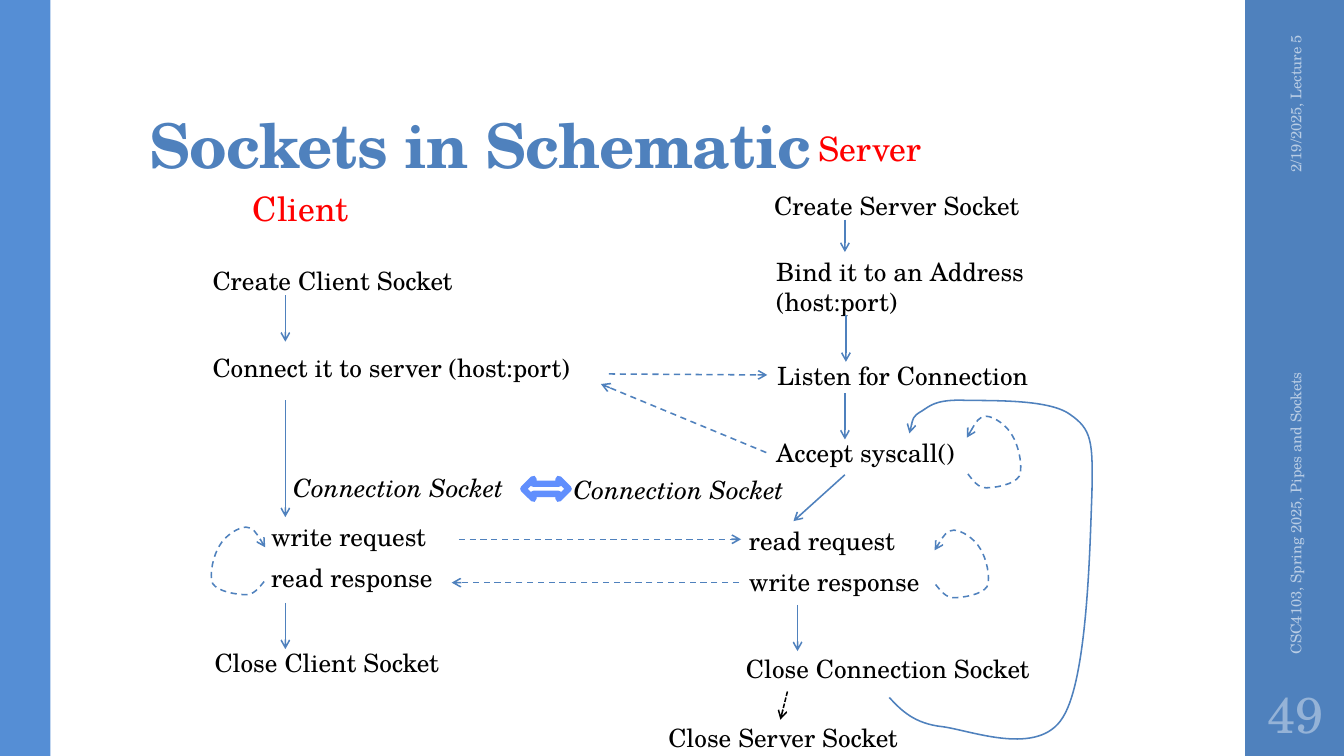
from lxml.etree import SubElement
from pptx import Presentation
from pptx.dml.color import RGBColor
from pptx.enum.dml import MSO_LINE
from pptx.enum.shapes import MSO_CONNECTOR, MSO_SHAPE
from pptx.enum.text import MSO_ANCHOR, PP_ALIGN
from pptx.oxml.ns import qn
from pptx.util import Inches, Pt

WIDTH, HEIGHT = 13.33, 7.5
FONT = "TeX Gyre Schola"
COLORS = {
    "blue": "4F81BD", "left band": "558ED5", "red": "FF0000", "black": "000000",
    "white": "FFFFFF", "footer": "B9CDE5", "number": "95B3D7", "socket arrow": "618FFD",
}
BANDS = [(WIDTH - 0.98, 1, "blue"), (0, 0.5, "left band")]  # left, width, colour

# Text styles: font values, then text frame and paragraph values
STYLES = {
    "title": {"font": {"size": Pt(44), "bold": True}, "color": "blue",
              "frame": {"vertical_anchor": MSO_ANCHOR.BOTTOM, "word_wrap": True,
                        "margin_top": Inches(0.03)},
              "para": {"line_spacing": 0.9}},
    "date": {"font": {"size": Pt(10.5)}, "color": "footer", "turn": 270,
             "frame": {"vertical_anchor": MSO_ANCHOR.MIDDLE, "word_wrap": True},
             "para": {"alignment": PP_ALIGN.RIGHT}},
    "course": {"font": {"size": Pt(10.5)}, "color": "footer", "turn": 270,
               "frame": {"vertical_anchor": MSO_ANCHOR.MIDDLE, "word_wrap": True}},
    "number": {"font": {"size": Pt(36)}, "color": "number",
               "frame": {"vertical_anchor": MSO_ANCHOR.MIDDLE, "word_wrap": True,
                         "margin_left": Inches(0.05), "margin_right": Inches(0.05)},
               "para": {"alignment": PP_ALIGN.CENTER}},
    "role": {"font": {"size": Pt(24)}, "color": "red", "frame": {"word_wrap": False}},
    "step": {"font": {"size": Pt(18)}, "color": "black", "frame": {"word_wrap": False}},
    "socket": {"font": {"size": Pt(18), "italic": True}, "color": "black",
               "frame": {"word_wrap": False}},
}

# Style, text, left, top, width, height
FRAME_TEXTS = [
    ("title", "Sockets in Schematic", 1.38, 0.32, 10.6, 1.53),
    ("date", "2/19/2025, Lecture 5", 11.81, 1.09, 2.08, 0.4),
    ("course", "CSC4103, Spring 2025, Pipes and Sockets", 10.89, 4.43, 3.92, 0.4),
    ("number", "49", 12.35, 6.75, 1, 0.65),
    ("role", "Client", 2.41, 1.82, 1.16, 0.5),
    ("role", "Server", 8.02, 1.22, 1.23, 0.5),
    ("step", "Bind it to an Address\n(host:port)", 7.6, 2.49, 2.74, 0.7),
]
# Style, text, left, top, width; all one line high
STEP_HEIGHT = 0.4
STEPS = [
    ("step", "Create Client Socket", 2.01, 2.58, 2.62),
    ("step", "Connect it to server (host:port)", 2.01, 3.45, 3.78),
    ("socket", "Connection Socket", 2.81, 4.64, 2.36),
    ("step", "write request", 2.59, 5.12, 1.76),
    ("step", "read response", 2.59, 5.53, 1.82),
    ("step", "Close Client Socket", 2.03, 6.37, 2.46),
    ("step", "Create Server Socket", 7.58, 1.84, 2.67),
    ("step", "Listen for Connection", 7.61, 3.53, 2.72),
    ("step", "Accept syscall()", 7.6, 4.29, 2),
    ("socket", "Connection Socket", 5.59, 4.66, 2.36),
    ("step", "read request", 7.33, 5.16, 1.67),
    ("step", "write response", 7.33, 5.57, 1.91),
    ("step", "Close Connection Socket", 7.3, 6.43, 3.06),
    ("step", "Close Server Socket", 6.53, 7.12, 2.52),
]

CLIENT_X, SERVER_X, CLOSE_X = 2.83, 8.38, 7.91
DOWN_ARROWS = [  # column, top, length
    (CLIENT_X, 2.93, 0.46), (CLIENT_X, 3.97, 1.16), (CLIENT_X, 5.98, 0.46),
    (SERVER_X, 2.18, 0.32), (8.39, 3.13, 0.46), (SERVER_X, 3.9, 0.46),
    (CLOSE_X, 6, 0.46),
]
SLANTED_ARROWS = [  # start, end, colour, dash
    ((SERVER_X, 4.71), (7.87, 5.17), "blue", None),
    ((7.81, 6.86), (7.74, 7.14), "black", MSO_LINE.SQUARE_DOT),
    ((6.04, 3.71), (7.61, 3.72), "blue", MSO_LINE.DASH),
    ((7.6, 4.49), (5.96, 3.81), "blue", MSO_LINE.DASH),
    ((4.55, 5.35), (7.35, 5.35), "blue", MSO_LINE.DASH),
    ((7.33, 5.78), (4.48, 5.78), "blue", MSO_LINE.DASH),
]

# Bezier points: a start, then two controls and an end for each stretch
LOOP_WIDTH, LOOP_HEIGHT = 0.54, 0.67
REPEAT_LOOP = [
    (0.01, 0.54), (0.06, 0.6), (0.11, 0.67), (0.19, 0.67),
    (0.28, 0.67), (0.47, 0.64), (0.52, 0.56), (0.56, 0.47), (0.51, 0.27), (0.45, 0.18),
    (0.4, 0.09), (0.27, 0), (0.19, 0), (0.12, 0), (0.06, 0.1), (0, 0.2),
]
LOOP_PLACES = [  # x of the arrow tip, top, direction, vertical stretch
    (9.27, 5.26, 1, 1), (2.63, 5.23, -1, 1), (9.59, 4.13, 1, 1.06),
]
NEXT_CLIENT_PLACE = (8.82, 3.97, 2.01, 3.36)
NEXT_CLIENT = [
    (8.82, 6.92), (8.94, 7.05), (9.07, 7.18), (9.35, 7.21),
    (9.64, 7.25), (10.3, 7.51), (10.54, 7.12), (10.79, 6.73), (10.81, 5.39), (10.83, 4.89),
    (10.84, 4.38), (10.83, 4.26), (10.61, 4.11), (10.39, 3.95), (9.77, 3.98), (9.52, 3.97),
    (9.27, 3.97), (9.22, 4.03), (9.14, 4.08), (9.05, 4.13), (9.04, 4.21), (9.02, 4.3),
]


def rgb(name):
    return RGBColor.from_string(COLORS[name])


def assign(target, values):
    for name, value in values.items():
        setattr(target, name, value)


def add_text(page, style_name, text, *place):
    style = STYLES[style_name]
    box = page.shapes.add_textbox(*map(Inches, place))
    box.rotation = style.get("turn", 0)
    assign(box.text_frame, style["frame"])
    box.text_frame.text = text
    for para in box.text_frame.paragraphs:
        assign(para, style.get("para", {}))
        for span in para.runs:
            assign(span.font, {"name": FONT, **style["font"]})
            span.font.color.rgb = rgb(style["color"])
            if style_name == "title":
                span._r.get_or_add_rPr().set("spc", "-50")


def add_block(page, kind, place, fill, outline=None):
    block = page.shapes.add_shape(kind, *map(Inches, place))
    block.shadow.inherit = False
    block.fill.solid()
    block.fill.fore_color.rgb = rgb(fill)
    if outline:
        block.line.color.rgb = rgb(outline)
        block.line.width = Pt(4.5)
    else:
        block.line.fill.background()


def style_arrow(line, color, dash):
    line.color.rgb = rgb(color)
    line.width = Pt(1.1)
    if dash:
        line.dash_style = dash
    SubElement(line._get_or_add_ln(), qn("a:tailEnd"), type="arrow")


def add_arrow(page, start, end, color="blue", dash=None):
    arrow = page.shapes.add_connector(MSO_CONNECTOR.STRAIGHT, *map(Inches, start + end))
    style_arrow(arrow.line, color, dash)
    SubElement(arrow._element.spPr, qn("a:effectLst"))


def add_curve(page, place, points, dash=None):
    """Span the place with a freeform, then give it cubic stretches as its outline."""
    left, top, width, height = map(Inches, place)
    builder = page.shapes.build_freeform(left, top)
    builder.add_line_segments([(left + width, top + height)], close=False)
    curve = builder.convert_to_shape()
    outline = curve._element.find(".//" + qn("a:path"))
    for segment in list(outline):
        outline.remove(segment)
    for index, (x, y) in enumerate(points):
        if index == 0:
            segment = SubElement(outline, qn("a:moveTo"))
        elif index % 3 == 1:
            segment = SubElement(outline, qn("a:cubicBezTo"))
        SubElement(segment, qn("a:pt"), x=str(Inches(x) - left), y=str(Inches(y) - top))
    curve.shadow.inherit = False
    curve.fill.background()
    style_arrow(curve.line, "blue", dash)


def main():
    deck = Presentation()
    deck.slide_width, deck.slide_height = Inches(WIDTH), Inches(HEIGHT)
    page = deck.slides.add_slide(deck.slide_layouts[6])
    for left, width, color in BANDS:
        add_block(page, MSO_SHAPE.RECTANGLE, (left, 0, width, HEIGHT), color)
    for entry in FRAME_TEXTS:
        add_text(page, *entry)
    for entry in STEPS:
        add_text(page, *entry, STEP_HEIGHT)
    for x, top, length in DOWN_ARROWS:
        add_arrow(page, (x, top), (x, top + length))
    for entry in SLANTED_ARROWS:
        add_arrow(page, *entry)
    for tip, top, direction, stretch in LOOP_PLACES:
        loop = [(tip + direction * x, top + stretch * y) for x, y in REPEAT_LOOP]
        left = min(tip, tip + direction * LOOP_WIDTH)
        add_curve(page, (left, top, LOOP_WIDTH, LOOP_HEIGHT * stretch), loop, MSO_LINE.DASH)
    add_curve(page, NEXT_CLIENT_PLACE, NEXT_CLIENT)
    add_block(page, MSO_SHAPE.LEFT_RIGHT_ARROW, (5.19, 4.75, 0.45, 0.2),
              "white", "socket arrow")
    deck.save("out.pptx")


if __name__ == "__main__":
    main()
